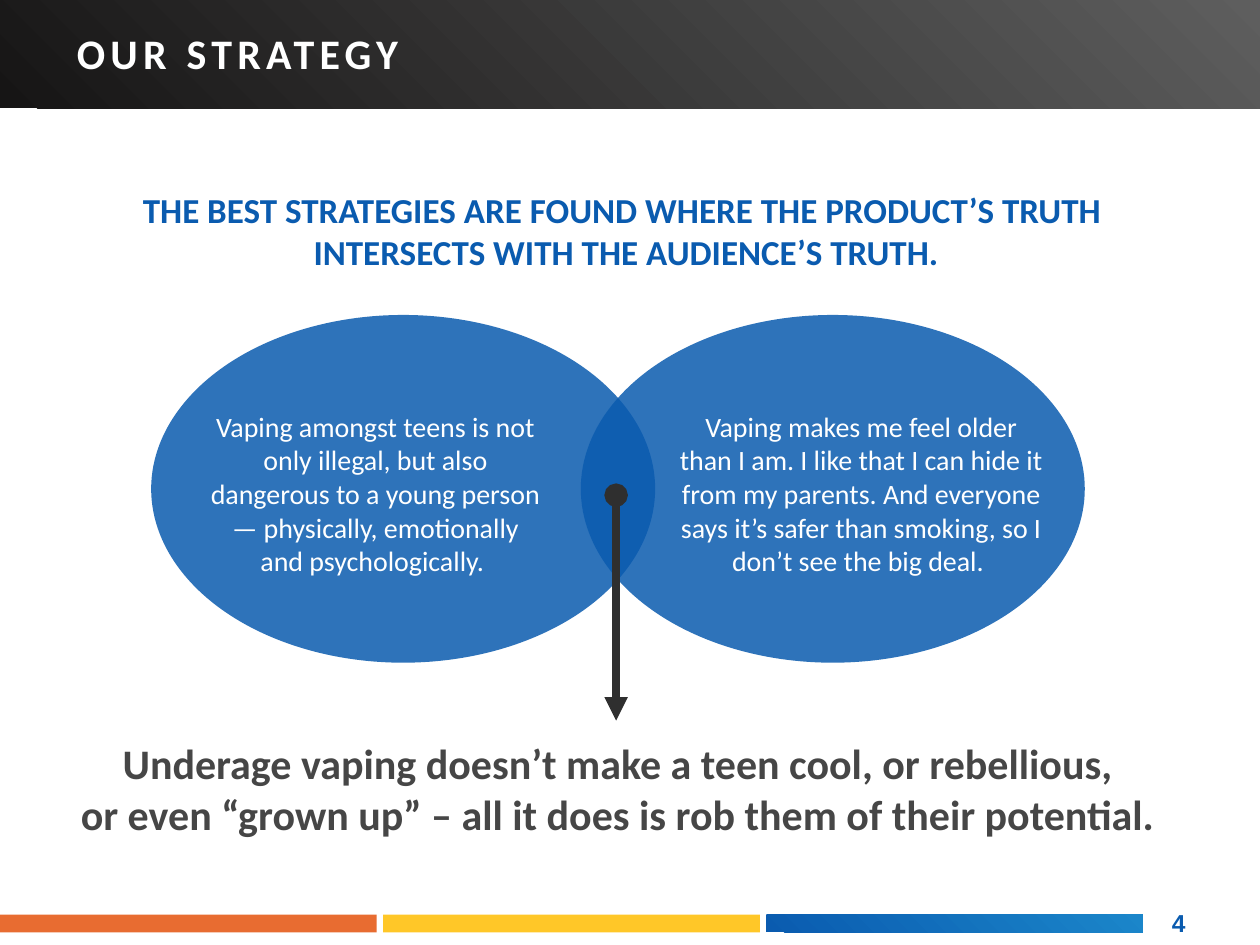
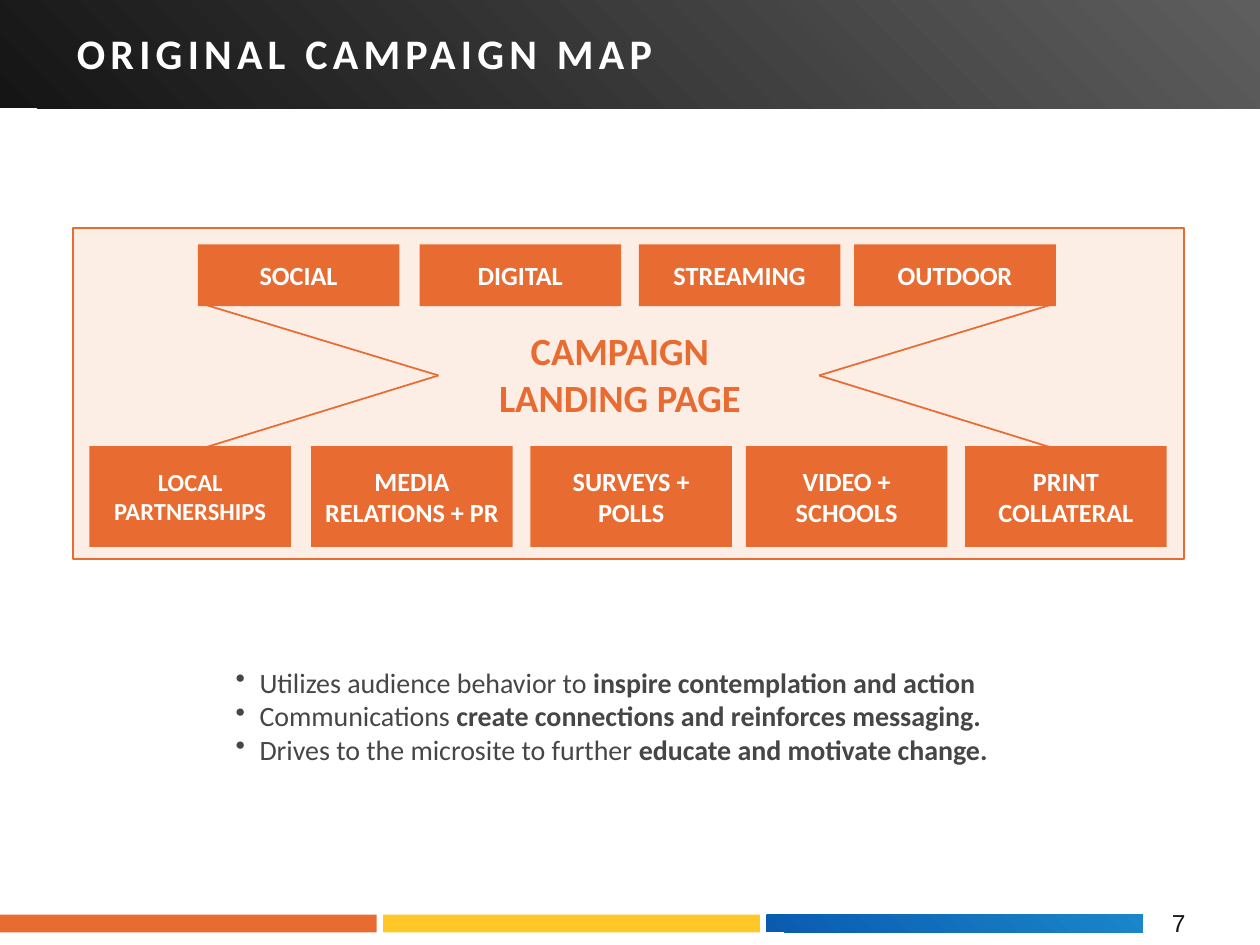
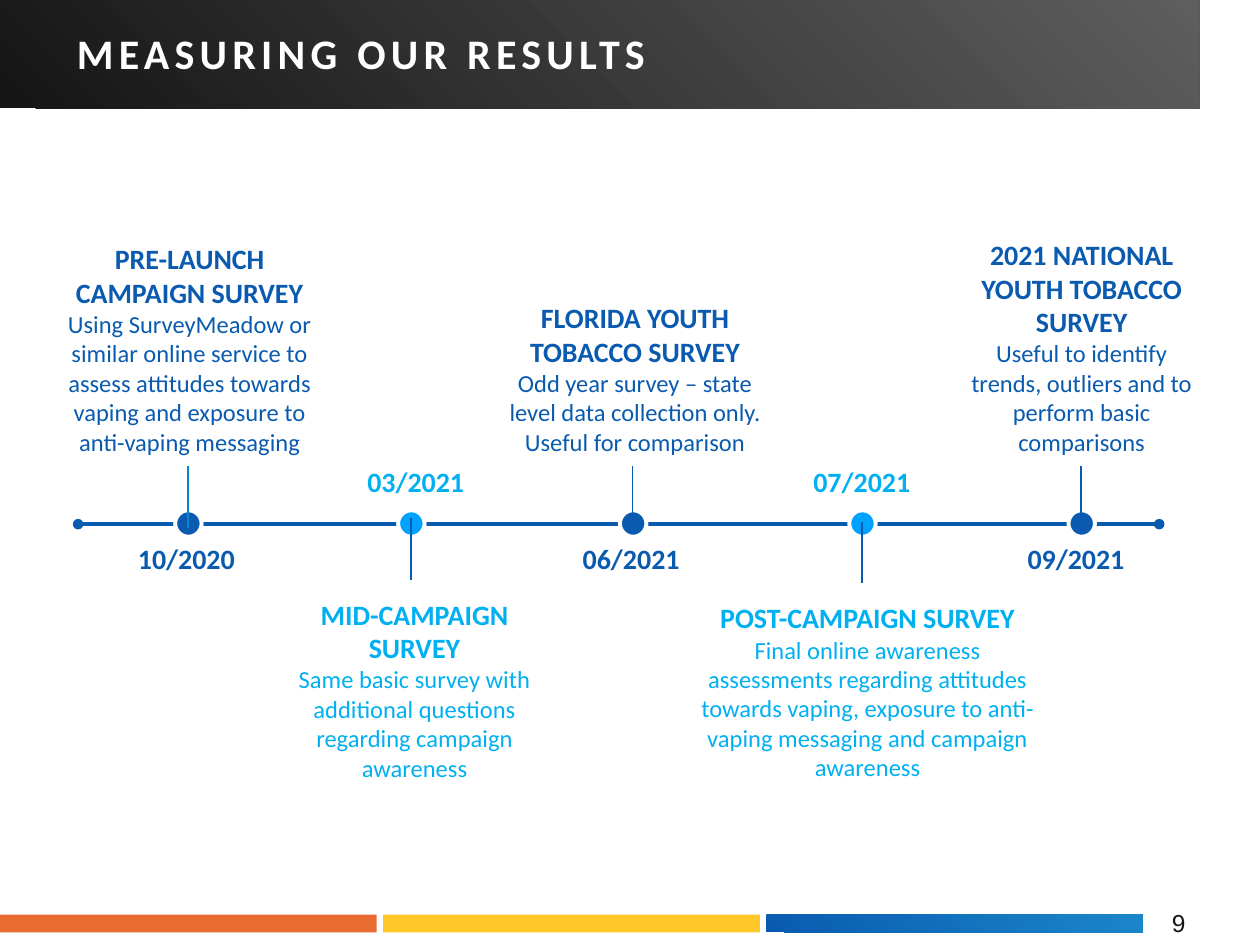
import dataclasses

import lxml.etree
import pptx
import pptx.dml.color
import pptx.enum.shapes
import pptx.enum.text
import pptx.oxml.ns
import pptx.util

EMU_PER_PX = 9144  # 100 px to the inch
SHAPE = pptx.enum.shapes.MSO_SHAPE
ALIGN = pptx.enum.text.PP_ALIGN
ANCHOR = pptx.enum.text.MSO_ANCHOR


@dataclasses.dataclass(frozen=True)
class Theme:
    font: str = "Calibri"
    number_font: str = "Arial"
    white: str = "FFFFFF"
    black: str = "161515"
    gray: str = "5E5E5E"
    arrow: str = "2F2F2F"
    text: str = "464646"
    blue: str = "0A5BAF"
    light_blue: str = "1B86CA"
    stem_blue: str = "0786D3"
    cyan: str = "00B0F0"
    dot_cyan: str = "00A2FF"
    orange: str = "E86C31"
    yellow: str = "FFC728"
    title_size: int = 24
    hub_size: int = 22
    lead_size: int = 20
    body_size: int = 16
    tile_size: int = 15
    small_size: int = 14


THEME = Theme()


def px(length):
    return pptx.util.Emu(length * EMU_PER_PX)


def rgb(color):
    return pptx.dml.color.RGBColor.from_string(color)


def add_xml(parent, tag, **attributes):
    return lxml.etree.SubElement(parent, pptx.oxml.ns.qn(tag), attributes)


class Deck:
    def __init__(self, theme):
        self.theme = theme
        self.presentation = pptx.Presentation()
        self.presentation.slide_width = px(1000)
        self.presentation.slide_height = px(750)
        self.slide = None

    def add_slide(self, title, number, band_width=1000, number_style=None):
        """Start a slide with its title band, footer bars and page number."""
        theme = self.theme
        self.slide = self.presentation.slides.add_slide(self.presentation.slide_layouts[6])
        self.shape(SHAPE.RECTANGLE, (0, 0, band_width, 86), (theme.black, theme.gray))
        heading = self.text((54, 15, 480, 54), [title], inset=7, size=theme.title_size,
                            color=theme.white, bold=True, align=ALIGN.LEFT, wrap=False)
        for run in heading.text_frame.paragraphs[0].runs:
            run._r.get_or_add_rPr().set("spc", "300")
        for column, fill in enumerate((theme.orange, theme.yellow, (theme.blue, theme.light_blue))):
            self.shape(SHAPE.RECTANGLE, (304 * column, 726, 299, 14), fill)
        style = {"color": theme.black, **(number_style or {})}
        self.text((930, 715, 17, 35), [number], size=theme.small_size,
                  font=theme.number_font, align=ALIGN.LEFT, wrap=False, **style)

    def shape(self, kind, box, fill, opacity=100, line=None, line_width=1):
        """Add a preset shape; a pair of colours runs from bottom left to top right."""
        shape = self.slide.shapes.add_shape(kind, *map(px, box))
        shape.shadow.inherit = False
        if isinstance(fill, tuple):
            shape.fill.gradient()
            shape.fill.gradient_angle = 45
            for stop, color in zip(shape.fill.gradient_stops, fill):
                stop.color.rgb = rgb(color)
        else:
            shape.fill.solid()
            shape.fill.fore_color.rgb = rgb(fill)
        if opacity < 100:
            color_element = shape._element.spPr.find(".//" + pptx.oxml.ns.qn("a:srgbClr"))
            add_xml(color_element, "a:alpha", val=str(opacity * 1000))
        if line:
            shape.line.color.rgb = rgb(line)
            shape.line.width = pptx.util.Pt(line_width)
        else:
            shape.line.fill.background()
        return shape

    def text(self, box, paragraphs, **style):
        text_box = self.slide.shapes.add_textbox(*map(px, box))
        self.fill_text(text_box, paragraphs, **style)
        return text_box

    def fill_text(self, shape, paragraphs, size, color, bold=False, font=None, inset=0,
                  align=ALIGN.CENTER, anchor=ANCHOR.MIDDLE, wrap=True, bullet=False,
                  line_spacing=None):
        """Fill a shape; a paragraph is a string or a list of (text, overrides) runs."""
        frame = shape.text_frame
        frame.word_wrap = wrap
        frame.vertical_anchor = anchor
        left, top, right, bottom = inset if isinstance(inset, tuple) else (inset,) * 4
        frame.margin_left, frame.margin_top = px(left), px(top)
        frame.margin_right, frame.margin_bottom = px(right), px(bottom)
        for index, runs in enumerate(paragraphs):
            paragraph = frame.add_paragraph() if index else frame.paragraphs[0]
            paragraph.alignment = align
            if line_spacing:
                paragraph.line_spacing = pptx.util.Pt(line_spacing)
            if bullet:
                properties = paragraph._p.get_or_add_pPr()
                properties.set("marL", str(px(19)))
                properties.set("indent", str(-px(19)))
                add_xml(properties, "a:buChar", char="•")
            paragraph.font.name = font or self.theme.font
            paragraph.font.size = pptx.util.Pt(size)
            paragraph.font.bold = bold
            paragraph.font.color.rgb = rgb(color)
            for content, overrides in [(runs, {})] if isinstance(runs, str) else runs:
                self.add_run(paragraph, content, **overrides)

    def add_run(self, paragraph, content, size=None, bold=None):
        for index, line in enumerate(content.split("\n")):
            if index:
                paragraph.add_line_break()
            if line:
                run = paragraph.add_run()
                run.text = line
                if size:
                    run.font.size = pptx.util.Pt(size)
                if bold is not None:
                    run.font.bold = bold

    def line(self, start, end, color, width=1, head=None, tail=None):
        connector = self.slide.shapes.add_connector(
            pptx.enum.shapes.MSO_CONNECTOR.STRAIGHT, *map(px, start + end))
        connector.line.color.rgb = rgb(color)
        connector.line.width = pptx.util.Pt(width)
        for tag, kind in (("a:headEnd", head), ("a:tailEnd", tail)):
            if kind:
                add_xml(connector.line._get_or_add_ln(), tag, type=kind)
        add_xml(connector._element.spPr, "a:effectLst")


def build_strategy(deck):
    theme = deck.theme
    deck.add_slide("OUR STRATEGY", "4", number_style={"color": theme.blue, "bold": True})
    deck.text((48, 150, 898, 67),
              ["THE BEST STRATEGIES ARE FOUND WHERE THE PRODUCT’S TRUTH \n"
               "INTERSECTS WITH THE AUDIENCE’S TRUTH."],
              size=theme.lead_size, color=theme.blue, bold=True, anchor=ANCHOR.TOP)

    # Overlapping truths
    for left in (120, 461):
        deck.shape(SHAPE.OVAL, (left, 250, 400, 276), theme.blue, opacity=85)
    truths = (
        (153, 302, "Vaping amongst teens is not only illegal, but also dangerous to a young "
                   "person — physically, emotionally and psychologically. "),
        (527, 325, "Vaping makes me feel older than I am. I like that I can hide it from my "
                   "parents. And everyone says it’s safer than smoking, so I don’t see the "
                   "big deal. "),
    )
    side_inset = (12, 12, 24, 12)
    for left, width, truth in truths:
        deck.text((left, 311, width, 161), [truth], inset=side_inset,
                  size=theme.body_size, color=theme.white)

    # Conclusion
    deck.line((489, 393), (489, 572), theme.arrow, 4.5, head="oval", tail="triangle")
    deck.text((0, 575, 1000, 101),
              ["Underage vaping doesn’t make a teen cool, or rebellious, \n"
               "or even “grown up” – all it does is rob them of their potential. "],
              inset=side_inset, size=theme.title_size, color=theme.text, bold=True)


def build_campaign_map(deck):
    theme = deck.theme
    deck.add_slide("ORIGINAL CAMPAIGN MAP", "7")
    deck.shape(SHAPE.RECTANGLE, (58, 181, 882, 263), theme.orange, opacity=12,
               line=theme.orange)

    # Lines that point at the landing page
    for outer, tip in ((160, 348), (837, 650)):
        for edge in (241, 356):
            deck.line((outer, edge), (tip, 298), theme.orange)
    deck.text((374, 254, 236, 85), ["CAMPAIGN", "LANDING PAGE"], inset=6,
              size=theme.hub_size, color=theme.orange, bold=True)

    # Channel tiles
    tile_offsets = (0, 176, 350, 521, 695)
    tile_rows = (
        (157, 194, 49, (["SOCIAL"], ["DIGITAL"], ["STREAMING"], ["OUTDOOR"])),
        (71, 354, 80, (["LOCAL", "PARTNERSHIPS"], ["MEDIA RELATIONS + PR"],
                       ["SURVEYS +", "POLLS"], ["VIDEO +", "SCHOOLS"],
                       ["PRINT", "COLLATERAL"])),
    )
    for left, top, height, channels in tile_rows:
        for offset, channel in zip(tile_offsets, channels):
            tile = deck.shape(SHAPE.RECTANGLE, (left + offset, top, 160, height), theme.orange)
            size = theme.small_size if "PARTNERSHIPS" in channel else theme.tile_size
            deck.fill_text(tile, channel, inset=7, size=size, color=theme.white, bold=True)

    # Benefits
    benefits = (
        ("Utilizes audience behavior to ", "inspire contemplation and action"),
        ("Communications ", "create connections and reinforces messaging."),
        ("Drives to the microsite to further ", "educate and motivate change."),
    )
    deck.text((181, 522, 745, 92),
              [[(opening, {}), (emphasis, {"bold": True})] for opening, emphasis in benefits],
              inset=6, size=theme.body_size, color=theme.text, align=ALIGN.LEFT, bullet=True)


def build_results(deck):
    theme = deck.theme
    deck.add_slide("MEASURING OUR RESULTS", "9", band_width=952)
    deck.line((62, 416), (920, 416), theme.blue, 2, head="oval", tail="oval")

    # Milestones: stem x, date, date centre, label left and width, drop, heading, details
    milestones = (
        (149, "10/2020", 148, 33, 235, 0, "PRE-LAUNCH CAMPAIGN SURVEY",
         "Using SurveyMeadow or similar online service to assess attitudes towards vaping "
         "and exposure to anti-vaping messaging"),
        (326, "03/2021", 330, 217, 224, 0, "MID-CAMPAIGN SURVEY",
         "Same basic survey with additional questions regarding campaign awareness"),
        (502, "06/2021", 501, 394, 220, 0, "FLORIDA YOUTH TOBACCO SURVEY",
         "Odd year survey – state level data collection only. Useful for comparison"),
        (684, "07/2021", 684, 544, 289, 3, "POST-CAMPAIGN SURVEY",
         "Final online awareness assessments regarding attitudes towards vaping, exposure "
         "to anti-vaping messaging and campaign awareness"),
        (858, "09/2021", 854, 758, 201, 0, "2021 NATIONAL YOUTH TOBACCO SURVEY",
         "Useful to identify trends, outliers and to perform basic comparisons"),
    )
    for index, (x, date, center, left, width, drop, heading, details) in enumerate(milestones):
        above = index % 2 == 0
        if above:
            color, dot_color, anchor = theme.blue, theme.blue, ANCHOR.BOTTOM
            date_top, stem_top, label_top, label_height = 414, 370, 182, 186
        else:
            color, dot_color, anchor = theme.cyan, theme.dot_cyan, ANCHOR.TOP
            date_top, stem_top, label_top, label_height = 353, 411 + drop, 468 + drop, 158
        deck.shape(SHAPE.OVAL, (x - 10, 405, 21, 21), dot_color, line=theme.white,
                   line_width=2.25)
        deck.line((x, stem_top + 49), (x, stem_top), theme.blue if index else theme.stem_blue)
        deck.text((center - 60, date_top, 120, 64), [date], size=theme.body_size,
                  color=color, bold=True, line_spacing=15)
        deck.text((left, label_top, width, label_height),
                  [[(heading + "\n", {}),
                    (details, {"size": theme.small_size, "bold": False})]],
                  inset=6, size=theme.body_size, color=color, bold=True, anchor=anchor)


def main():
    deck = Deck(THEME)
    build_strategy(deck)
    build_campaign_map(deck)
    build_results(deck)
    deck.presentation.save("out.pptx")


if __name__ == "__main__":
    main()
